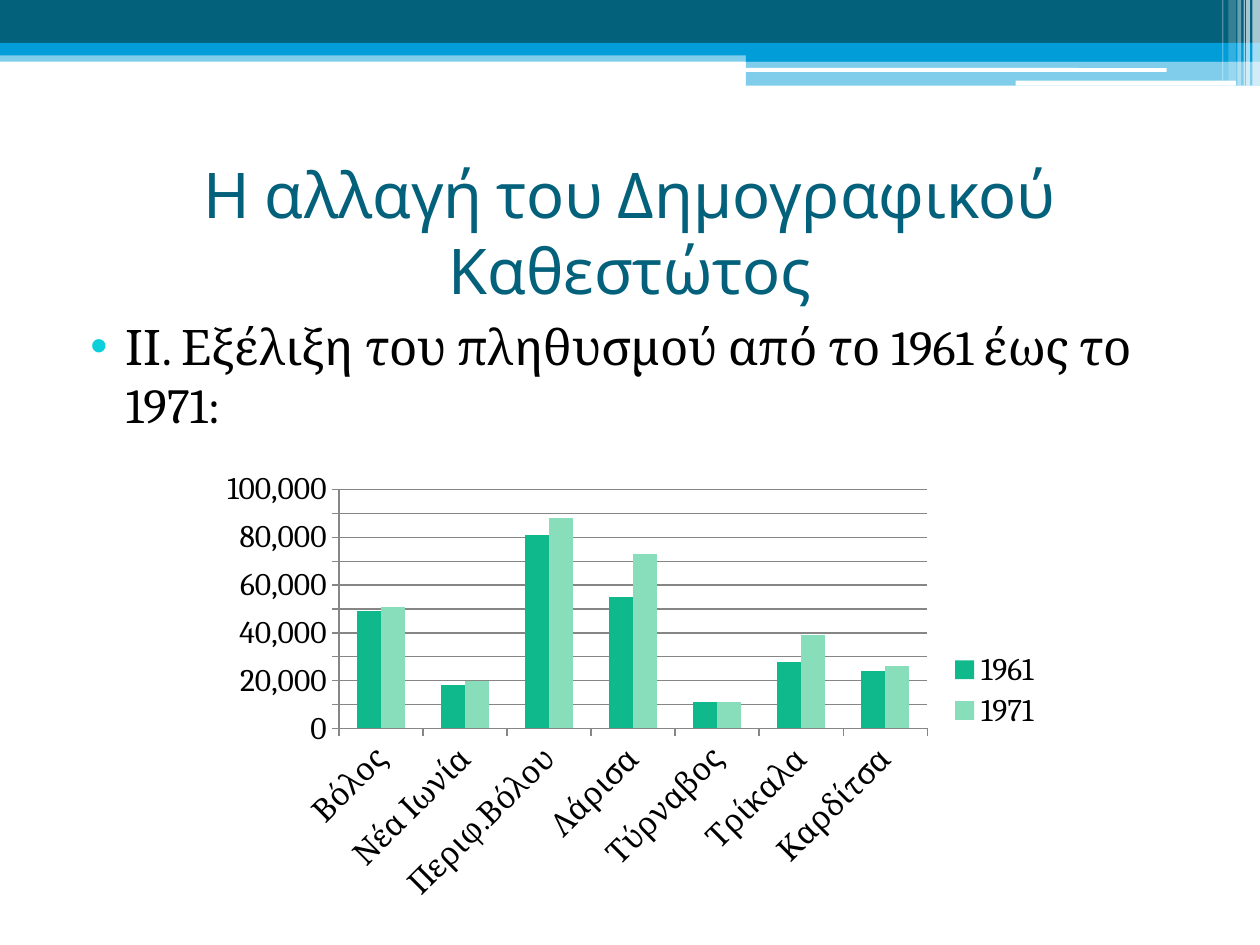
from dataclasses import dataclass

from lxml import etree
from pptx import Presentation
from pptx.chart.data import CategoryChartData
from pptx.dml.color import RGBColor
from pptx.enum.chart import XL_CHART_TYPE, XL_LEGEND_POSITION, XL_TICK_MARK
from pptx.enum.shapes import MSO_SHAPE
from pptx.enum.text import MSO_ANCHOR, PP_ALIGN
from pptx.oxml import parse_xml
from pptx.oxml.ns import nsdecls, qn
from pptx.util import Inches, Pt


@dataclass(frozen=True)
class Theme:
    dark: str = "04617B"
    bright: str = "009DD9"
    white: str = "FFFFFF"
    text: str = "000000"
    bullet: str = "0BD0D9"
    grid: str = "868686"
    series: tuple = ("10B98C", "88DDBB")
    title_font: str = "Cabin"
    body_font: str = "Cambria"
    title_size: int = 36
    body_size: int = 28
    chart_size: int = 18


THEME = Theme()


def color(value):
    return RGBColor.from_string(value)


def style_font(font, name, size, value):
    font.name = name
    font.size = Pt(size)
    font.color.rgb = color(value)


def add_band(slide, box, fill, opacity=100, rounded=False):
    kind = MSO_SHAPE.ROUNDED_RECTANGLE if rounded else MSO_SHAPE.RECTANGLE
    shape = slide.shapes.add_shape(kind, *map(Inches, box))
    shape.shadow.inherit = False
    shape.fill.solid()
    shape.fill.fore_color.rgb = color(fill)
    shape.line.fill.background()
    if opacity < 100:
        rgb = shape.fill._xPr.find(".//" + qn("a:srgbClr"))
        etree.SubElement(rgb, qn("a:alpha"), val=str(opacity * 1000))


def add_header(slide, left, top, width):
    # Full-width bands, then the step on the right
    step_left, step_width = left + 5.92, width - 5.92
    add_band(slide, (left, top + 0.4, width, 0.09), THEME.bright, 50)
    add_band(slide, (left, top, width, 0.34), THEME.dark)
    add_band(slide, (left, top + 0.34, width, 0.1), THEME.bright)
    add_band(slide, (step_left, top + 0.39, step_width, 0.1), THEME.bright)
    add_band(slide, (step_left, top + 0.48, step_width, 0.2), THEME.bright, 50)

    # White rules
    add_band(slide, (left + 5.91, top + 0.54, 3.35, 0.03), THEME.white, rounded=True)
    add_band(slide, (left + 8.06, top + 0.64, 1.75, 0.04), THEME.white, rounded=True)

    # Translucent stripes: distance from right edge, width, height, opacity
    stripes = [
        (0.06, 0.06, 0.68, 65),
        (0.11, 0.03, 0.68, 65),
        (0.13, 0.01, 0.68, 60),
        (0.18, 0.03, 0.68, 40),
        (0.25, 0.06, 0.64, 20),
        (0.3, 0.01, 0.64, 30),
    ]
    for offset, stripe_width, height, opacity in stripes:
        box = (left + width - offset, top, stripe_width, height)
        add_band(slide, box, THEME.white, opacity)


def add_text(slide, box, text):
    text_frame = slide.shapes.add_textbox(*map(Inches, box)).text_frame
    text_frame.word_wrap = True
    text_frame.text = text
    return text_frame


def add_title(slide, box, text):
    text_frame = add_text(slide, box, text)
    text_frame.vertical_anchor = MSO_ANCHOR.MIDDLE
    paragraph = text_frame.paragraphs[0]
    paragraph.alignment = PP_ALIGN.CENTER
    style_font(paragraph.runs[0].font, THEME.title_font, THEME.title_size, THEME.dark)


def add_bullet(slide, box, text):
    paragraph = add_text(slide, box, text).paragraphs[0]
    properties = paragraph._p.get_or_add_pPr()
    properties.set("marL", str(Inches(0.4)))
    properties.set("indent", str(Inches(-0.28)))
    bullet_color = etree.SubElement(properties, qn("a:buClr"))
    etree.SubElement(bullet_color, qn("a:srgbClr"), val=THEME.bullet)
    etree.SubElement(properties, qn("a:buFont"), typeface="Arial")
    etree.SubElement(properties, qn("a:buChar"), char="•")
    style_font(paragraph.runs[0].font, THEME.body_font, THEME.body_size, THEME.text)


def manual_layout(left, top, width, height, inner=False):
    target = '<c:layoutTarget val="inner"/>' if inner else ""
    return parse_xml(
        f'<c:layout {nsdecls("c")}><c:manualLayout>{target}'
        '<c:xMode val="edge"/><c:yMode val="edge"/>'
        f'<c:x val="{left}"/><c:y val="{top}"/><c:w val="{width}"/><c:h val="{height}"/>'
        "</c:manualLayout></c:layout>"
    )


def add_population_chart(slide, box, categories, populations):
    data = CategoryChartData(number_format="#,##0")
    data.categories = categories
    for year, values in populations.items():
        data.add_series(year, values)
    chart = slide.shapes.add_chart(
        XL_CHART_TYPE.COLUMN_CLUSTERED, *map(Inches, box), data
    ).chart
    style_font(chart.font, THEME.body_font, THEME.chart_size, THEME.text)
    chart.has_title = False

    # Columns
    plot = chart.plots[0]
    plot.gap_width = 150
    plot.overlap = 0
    plot.vary_by_categories = False
    for series, fill in zip(plot.series, THEME.series):
        series.format.fill.solid()
        series.format.fill.fore_color.rgb = color(fill)

    # Axes
    value_axis = chart.value_axis
    value_axis.minimum_scale, value_axis.maximum_scale = 0, 100000
    value_axis.major_unit = 10000
    value_axis.has_major_gridlines = True
    value_axis.tick_labels.number_format = "#,##0"
    value_axis.tick_labels.number_format_is_linked = False
    category_axis = chart.category_axis
    for axis in (value_axis, category_axis):
        axis.major_tick_mark = XL_TICK_MARK.OUTSIDE
        style_font(axis.tick_labels.font, THEME.body_font, THEME.chart_size, THEME.text)
    for line in (value_axis.format.line, category_axis.format.line,
                 value_axis.major_gridlines.format.line):
        line.color.rgb = color(THEME.grid)
        line.width = Pt(0.75)
    label_body = category_axis._element.find(qn("c:txPr")).find(qn("a:bodyPr"))
    label_body.set("rot", str(-45 * 60000))
    label_body.set("vert", "horz")

    # Legend and plot area positions
    chart.has_legend = True
    legend = chart.legend
    legend.position = XL_LEGEND_POSITION.RIGHT
    legend.include_in_layout = False
    style_font(legend.font, THEME.body_font, THEME.chart_size, THEME.text)
    legend_element = legend._element
    for layout in legend_element.findall(qn("c:layout")):
        legend_element.remove(layout)
    legend_element.find(qn("c:legendPos")).addnext(manual_layout(0.87, 0.41, 0.12, 0.19))
    plot_area = chart._chartSpace.chart.plotArea
    for layout in plot_area.findall(qn("c:layout")):
        plot_area.remove(layout)
    plot_area.insert(0, manual_layout(0.15, 0.06, 0.7, 0.53, inner=True))


def main():
    presentation = Presentation()
    presentation.slide_width = Inches(10)
    presentation.slide_height = Inches(7.5)
    slide = presentation.slides.add_slide(presentation.slide_layouts[6])

    add_header(slide, 0, 0, 10)
    add_title(slide, (0.5, 1.25, 9, 1.17), "Η αλλαγή του Δημογραφικού Καθεστώτος")
    add_bullet(slide, (0.5, 2.46, 9, 4.73),
               "ΙΙ. Εξέλιξη του πληθυσμού από το 1961 έως το 1971:")
    add_population_chart(
        slide,
        (1.69, 3.67, 6.67, 3.58),
        ["Βόλος", "Νέα Ιωνία", "Περιφ.Βόλου", "Λάρισα", "Τύρναβος", "Τρίκαλα", "Καρδίτσα"],
        {
            "1961": [49000, 18000, 81000, 55000, 11000, 28000, 24000],
            "1971": [51000, 20000, 88000, 73000, 11000, 39000, 26000],
        },
    )
    presentation.save("out.pptx")


if __name__ == "__main__":
    main()
